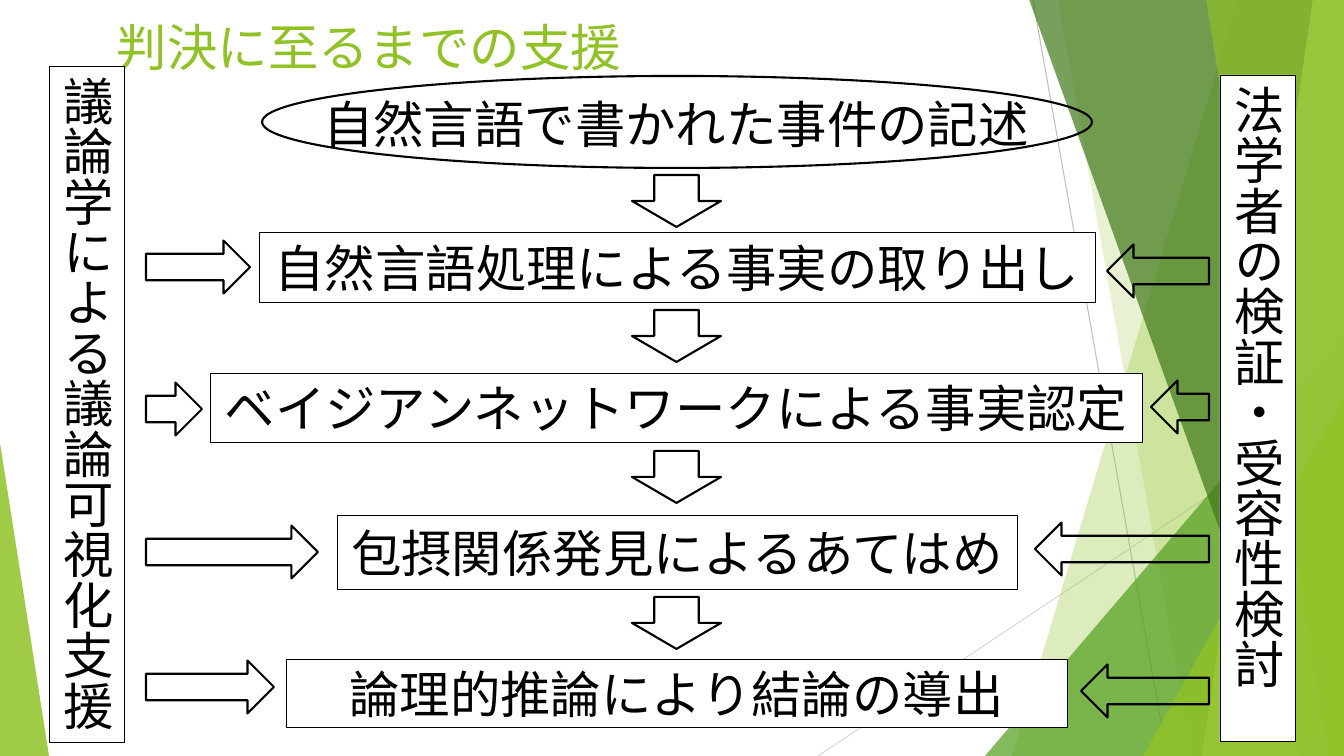
import pptx
import pptx.util
import pptx.dml.color
import pptx.enum.shapes
import pptx.enum.text
import pptx.oxml.ns
import lxml.etree

EMU_PER_PX = 914400 / 100.8
WIDTH, HEIGHT = 1344, 756
KIND = pptx.enum.shapes.MSO_SHAPE
ALIGN = pptx.enum.text.PP_ALIGN
ANCHOR = pptx.enum.text.MSO_ANCHOR
FONT = "Noto Sans CJK JP"
COLORS = {
    "white": "FFFFFF", "black": "000000", "lime": "90C226", "green": "54A021",
    "forest": "3F7819", "pale": "C0E474", "gray": "BFBFBF", "silver": "D9D9D9",
}

TITLE = ("判決に至るまでの支援", (107, 11, 1159, 82))
SOURCE = ("自然言語で書かれた事件の記述", (262, 76, 830, 92), (284, 88, 784, 58))
STEPS = [
    ("自然言語処理による事実の取り出し", (259, 232, 836, 70)),
    ("ベイジアンネットワークによる事実認定", (210, 373, 932, 69)),
    ("包摂関係発見によるあてはめ", (337, 515, 680, 74)),
    ("論理的推論により結論の導出", (286, 659, 781, 68)),
]
SIDES = [
    ("法学者の検証・受容性検討", (1220, 75, 75, 666)),
    ("議論学による議論可視化支援", (49, 66, 75, 676)),
]
FLOW_TOPS = [175, 310, 451, 597]
FLOW_LEFT, FLOW_WIDTH, FLOW_HEIGHT = 632, 89, 52
SIDE_THICKNESS = 53
LEFT_START, RIGHT_START = 146, 1209
LEFT_ARROWS = [(250, 267), (202, 409), (318, 552), (274, 687)]
RIGHT_ARROWS = [(1107, 271), (1151, 407), (1035, 549), (1081, 691)]

RAYS = [((1033, 0), (1167, 756), "gray"), ((1344, 406), (818, 756), "silver")]
FACETS = [
    ([(1238, -1), (1344, -1), (1344, 756), (1012, 756)], "lime", 30),
    ([(1058, -1), (1344, -1), (1344, 756), (1192, 756)], "lime", 20),
    ([(1344, 336), (1344, 756), (985, 756)], "green", 72),
    ([(1029, -1), (1344, -1), (1344, 756), (1301, 756)], "forest", 70),
    ([(1313, -1), (1344, -1), (1344, 756), (1202, 756)], "pale", 70),
    ([(1206, -1), (1344, -1), (1344, 756), (1329, 756)], "lime", 65),
    ([(1344, 396), (1344, 756), (1143, 756)], "lime", 80),
    ([(0, 443), (49, 756), (0, 756)], "lime", 85),
]


def px(value):
    return pptx.util.Emu(round(value * EMU_PER_PX))


def rgb(name):
    return pptx.dml.color.RGBColor.from_string(COLORS[name])


def add_child(parent, tag, **attributes):
    return lxml.etree.SubElement(parent, pptx.oxml.ns.qn(tag), attributes)


def add_ray(shapes, start, end, color):
    ray = shapes.add_connector(
        pptx.enum.shapes.MSO_CONNECTOR.STRAIGHT, *map(px, start + end))
    ray.line.color.rgb = rgb(color)
    ray.line.width = pptx.util.Pt(0.75)
    add_child(ray._element.spPr, "a:effectLst")


def add_facet(shapes, points, color, opacity):
    builder = shapes.build_freeform(*points[0], scale=EMU_PER_PX)
    builder.add_line_segments(points[1:], close=True)
    facet = builder.convert_to_shape()
    facet.shadow.inherit = False
    facet.line.fill.background()
    facet.fill.solid()
    facet.fill.fore_color.rgb = rgb(color)
    solid = facet._element.spPr.find(pptx.oxml.ns.qn("a:solidFill"))
    add_child(solid[0], "a:alpha", val=str(opacity * 1000))


def add_outlined(shapes, kind, box, line_width, fill=None):
    shape = shapes.add_shape(kind, *map(px, box))
    shape.shadow.inherit = False
    shape.line.color.rgb = rgb("black")
    shape.line.width = pptx.util.Pt(line_width)
    if fill:
        shape.fill.solid()
        shape.fill.fore_color.rgb = rgb(fill)
    else:
        shape.fill.background()
    return shape


def write(shape, text, color="black", font=FONT, align=ALIGN.CENTER,
          anchor=ANCHOR.MIDDLE, wrap=True):
    frame = shape.text_frame
    frame.word_wrap = wrap
    frame.vertical_anchor = anchor
    paragraph = frame.paragraphs[0]
    paragraph.alignment = align
    run = paragraph.add_run()
    run.text = text
    run.font.size = pptx.util.Pt(36)
    run.font.name = font
    run.font.color.rgb = rgb(color)
    add_child(run._r.get_or_add_rPr(), "a:ea", typeface=FONT)


def add_side_arrow(shapes, start, tip, middle):
    length = abs(tip - start)
    box = ((start + tip - SIDE_THICKNESS) / 2, middle - length / 2,
           SIDE_THICKNESS, length)
    arrow = add_outlined(shapes, KIND.DOWN_ARROW, box, 1.5)
    arrow.rotation = 270 if tip > start else 90


def main():
    presentation = pptx.Presentation()
    presentation.slide_width = px(WIDTH)
    presentation.slide_height = px(HEIGHT)
    slide = presentation.slides.add_slide(presentation.slide_layouts[6])
    shapes = slide.shapes

    background = shapes.add_group_shape()
    for ray in RAYS:
        add_ray(background.shapes, *ray)
    for facet in FACETS:
        add_facet(background.shapes, *facet)

    text, box = TITLE
    write(shapes.add_textbox(*map(px, box)), text, "lime", "Lato",
          ALIGN.LEFT, ANCHOR.TOP)

    for text, box in STEPS:
        write(add_outlined(shapes, KIND.RECTANGLE, box, 0.5, "white"), text,
              wrap=False)
    for top in FLOW_TOPS:
        add_outlined(shapes, KIND.DOWN_ARROW,
                     (FLOW_LEFT, top, FLOW_WIDTH, FLOW_HEIGHT), 1.5, "white")

    text, oval_box, text_box = SOURCE
    source = shapes.add_group_shape()
    add_outlined(source.shapes, KIND.OVAL, oval_box, 1.5)
    write(source.shapes.add_textbox(*map(px, text_box)), text,
          anchor=ANCHOR.TOP)

    for start, arrows in ((RIGHT_START, RIGHT_ARROWS), (LEFT_START, LEFT_ARROWS)):
        for tip, middle in arrows:
            add_side_arrow(shapes, start, tip, middle)

    for text, box in SIDES:
        side = add_outlined(shapes, KIND.RECTANGLE, box, 0.5, "white")
        write(side, text, align=ALIGN.LEFT)
        side.text_frame._txBody.bodyPr.set("vert", "eaVert")

    presentation.save("out.pptx")


if __name__ == "__main__":
    main()
